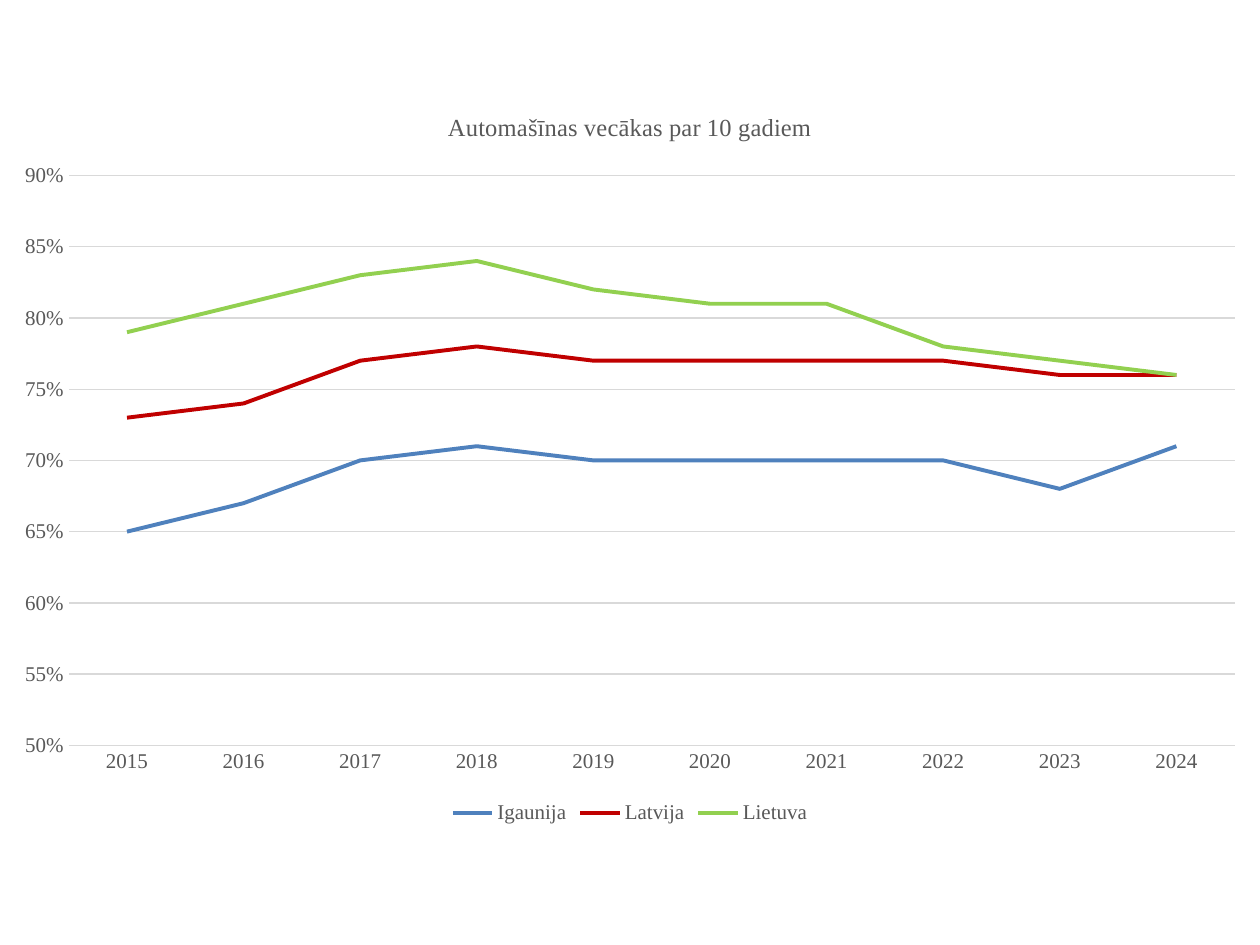
from pptx import Presentation
from pptx.chart.data import CategoryChartData
from pptx.dml.color import RGBColor
from pptx.enum.chart import XL_CHART_TYPE, XL_LEGEND_POSITION, XL_TICK_MARK
from pptx.util import Inches, Pt

LINE = XL_CHART_TYPE.LINE
BOTTOM = XL_LEGEND_POSITION.BOTTOM
NO_TICK = XL_TICK_MARK.NONE

FONT = "Times New Roman"
GRAY = "595959"
PALE = "D9D9D9"

YEARS = [str(year) for year in range(2015, 2025)]
LANDS = [
    ("Igaunija", "4F81BD",
     [0.65, 0.67, 0.70, 0.71, 0.70, 0.70, 0.70, 0.70, 0.68, 0.71]),
    ("Latvija", "C00000",
     [0.73, 0.74, 0.77, 0.78, 0.77, 0.77, 0.77, 0.77, 0.76, 0.76]),
    ("Lietuva", "92D050",
     [0.79, 0.81, 0.83, 0.84, 0.82, 0.81, 0.81, 0.78, 0.77, 0.76]),
]


def color(code):
    return RGBColor.from_string(code)


def style(font, size=12, fill=GRAY, bold=False):
    font.name = FONT
    font.size = Pt(size)
    font.bold = bold
    font.color.rgb = color(fill)


def write(frame, text, **form):
    para = frame.paragraphs[0]
    run = para.add_run()
    run.text = text
    style(run.font, **form)


def stroke(line, code, width):
    line.color.rgb = color(code)
    line.width = Pt(width)


class Page:
    def __init__(self, slide):
        self.slide = slide

    def chart(self, title, left, top, width, height):
        data = CategoryChartData(number_format="0%")
        data.categories = YEARS
        for name, _, shares in LANDS:
            data.add_series(name, shares)
        frame = self.slide.shapes.add_chart(
            LINE, Inches(left), Inches(top), Inches(width), Inches(height), data)
        chart = frame.chart
        style(chart.font)

        # Title and legend
        chart.has_title = True
        write(chart.chart_title.text_frame, title, size=14)
        chart.has_legend = True
        chart.legend.position = BOTTOM
        chart.legend.include_in_layout = False
        style(chart.legend.font)

        # Lines
        chart.plots[0].vary_by_categories = False
        for series, (_, code, _) in zip(chart.plots[0].series, LANDS):
            series.smooth = False
            stroke(series.format.line, code, 2.25)

        self.axes(chart)

    def axes(self, chart):
        years, shares = chart.category_axis, chart.value_axis
        for axis in (years, shares):
            axis.major_tick_mark = NO_TICK
            axis.minor_tick_mark = NO_TICK
            style(axis.tick_labels.font)
        stroke(years.format.line, PALE, 0.75)

        shares.minimum_scale = 0.5
        shares.maximum_scale = 0.9
        shares.major_unit = 0.05
        shares.tick_labels.number_format = "0%"
        shares.tick_labels.number_format_is_linked = False
        shares.format.line.fill.background()
        shares.has_major_gridlines = True
        stroke(shares.major_gridlines.format.line, PALE, 0.75)


def main():
    deck = Presentation()
    deck.slide_width, deck.slide_height = Inches(10), Inches(7.5)
    blank = deck.slide_layouts[6]
    page = Page(deck.slides.add_slide(blank))
    page.chart("Automašīnas vecākas par 10 gadiem", 0, 0.68, 10, 5.9)
    deck.save("out.pptx")


if __name__ == "__main__":
    main()
